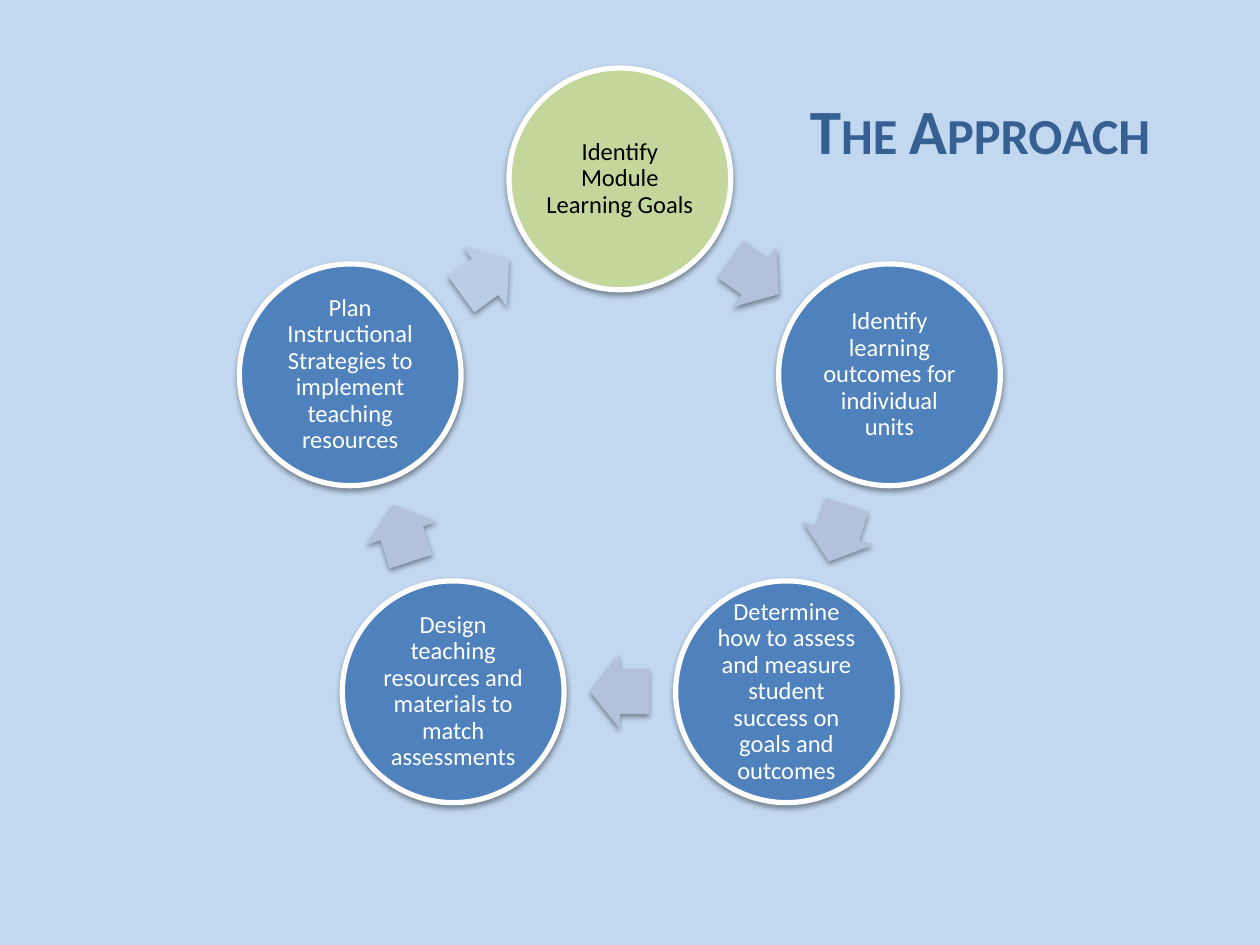
import math
from dataclasses import dataclass

from lxml import etree
from pptx import Presentation
from pptx.dml.color import RGBColor
from pptx.enum import shapes, text
from pptx.oxml import ns
from pptx.util import Inches, Pt


@dataclass(frozen=True)
class Theme:
    background: str = "C2D8F0"
    first_step: str = "C3D69B"
    step: str = "4F81BD"
    outline: str = "FFFFFF"
    arrow: str = "B3C1DB"
    last_arrow: str = "B9CDE5"
    title: str = "376092"
    dark: str = "000000"
    light: str = "FFFFFF"
    font: str = "Calibri"
    title_size: int = 36
    step_size: int = 14


THEME = Theme()
STEPS = [
    "Identify Module Learning Goals",
    "Identify learning outcomes for individual units",
    "Determine how to assess and measure student success on goals and outcomes",
    "Design teaching resources and materials to match assessments",
    "Plan Instructional Strategies to implement teaching resources",
]
STEP_DIAMETER = 1.76
ARROW_LENGTH, ARROW_HEIGHT = 0.47, 0.59


def apply(target, formats):
    for name, value in formats.items():
        setattr(target, name, value)


def paint(fill, color):
    fill.solid()
    fill.fore_color.rgb = RGBColor.from_string(color)


def add_soft_shadow(shape):
    """Put a soft shadow straight below the shape."""
    shape.shadow.inherit = False
    effects = shape._element.spPr.find(ns.qn("a:effectLst"))
    shadow = etree.SubElement(effects, ns.qn("a:outerShdw"), blurRad=str(Pt(3.1)),
                              dist=str(Pt(1.6)), dir="5400000", rotWithShape="0")
    color = etree.SubElement(shadow, ns.qn("a:srgbClr"), val=THEME.dark)
    etree.SubElement(color, ns.qn("a:alpha"), val="38000")


def add_centered(page, kind, center, size, color):
    """Add a filled, shadowed shape around a centre point given in inches."""
    (x, y), (width, height) = center, size
    shape = page.shapes.add_shape(kind, Inches(x - width / 2), Inches(y - height / 2),
                                  Inches(width), Inches(height))
    paint(shape.fill, color)
    add_soft_shadow(shape)
    return shape


def write(shape, words, size, color, align, bold=False, **frame_formats):
    frame = shape.text_frame
    apply(frame, {"word_wrap": True, "vertical_anchor": text.MSO_ANCHOR.MIDDLE,
                  **frame_formats})
    para = frame.paragraphs[0]
    para.alignment = align
    span = para.add_run()
    span.text = words
    apply(span.font, {"name": THEME.font, "size": Pt(size), "bold": bold})
    span.font.color.rgb = RGBColor.from_string(color)
    return para, span


def add_step(page, center, words, fill, ink):
    circle = add_centered(page, shapes.MSO_SHAPE.OVAL, center,
                          (STEP_DIAMETER, STEP_DIAMETER), fill)
    circle.line.color.rgb = RGBColor.from_string(THEME.outline)
    circle.line.width = Pt(3)
    sides = ("left", "top", "right", "bottom")
    insets = {f"margin_{side}": Inches(0.02) for side in sides}
    para, _ = write(circle, words, THEME.step_size, ink, text.PP_ALIGN.CENTER, **insets)
    para.line_spacing = 0.9


def add_arrow(page, center, rotation, color):
    arrow = add_centered(page, shapes.MSO_SHAPE.RIGHT_ARROW, center,
                         (ARROW_LENGTH, ARROW_HEIGHT), color)
    arrow.adjustments[0], arrow.adjustments[1] = 0.6, 0.5
    arrow.line.fill.background()
    arrow.rotation = rotation


def add_cycle(page, left, top, width):
    """Spread the steps clockwise from the top of a ring, an arrow after each."""
    turn = 360 / len(STEPS)
    radius = (width - STEP_DIAMETER) / 2 / math.sin(math.radians(turn))
    middle_x, middle_y = left + width / 2, top + STEP_DIAMETER / 2 + radius

    def on_ring(angle, distance):
        angle = math.radians(angle)
        return middle_x + distance * math.sin(angle), middle_y - distance * math.cos(angle)

    arrow_radius = radius * math.cos(math.radians(turn / 2))
    last = len(STEPS) - 1
    for index, words in enumerate(STEPS):
        fill, ink = (THEME.step, THEME.light) if index else (THEME.first_step, THEME.dark)
        add_step(page, on_ring(index * turn, radius), words, fill, ink)
        angle = (index + 0.5) * turn
        color = THEME.last_arrow if index == last else THEME.arrow
        add_arrow(page, on_ring(angle, arrow_radius), angle, color)


def add_title(page, left, top, width, height):
    box = page.shapes.add_textbox(Inches(left), Inches(top), Inches(width), Inches(height))
    _, span = write(box, "The Approach", THEME.title_size, THEME.title,
                    text.PP_ALIGN.LEFT, bold=True)
    span.font._element.set("cap", "small")


def main():
    deck = Presentation()
    apply(deck, {"slide_width": Inches(10), "slide_height": Inches(7.5)})
    page = deck.slides.add_slide(deck.slide_layouts[6])
    paint(page.background.fill, THEME.background)
    add_cycle(page, 1.9, 0.54, 6.04)
    add_title(page, 6.33, 0.61, 3.17, 0.83)
    deck.save("out.pptx")


if __name__ == "__main__":
    main()
